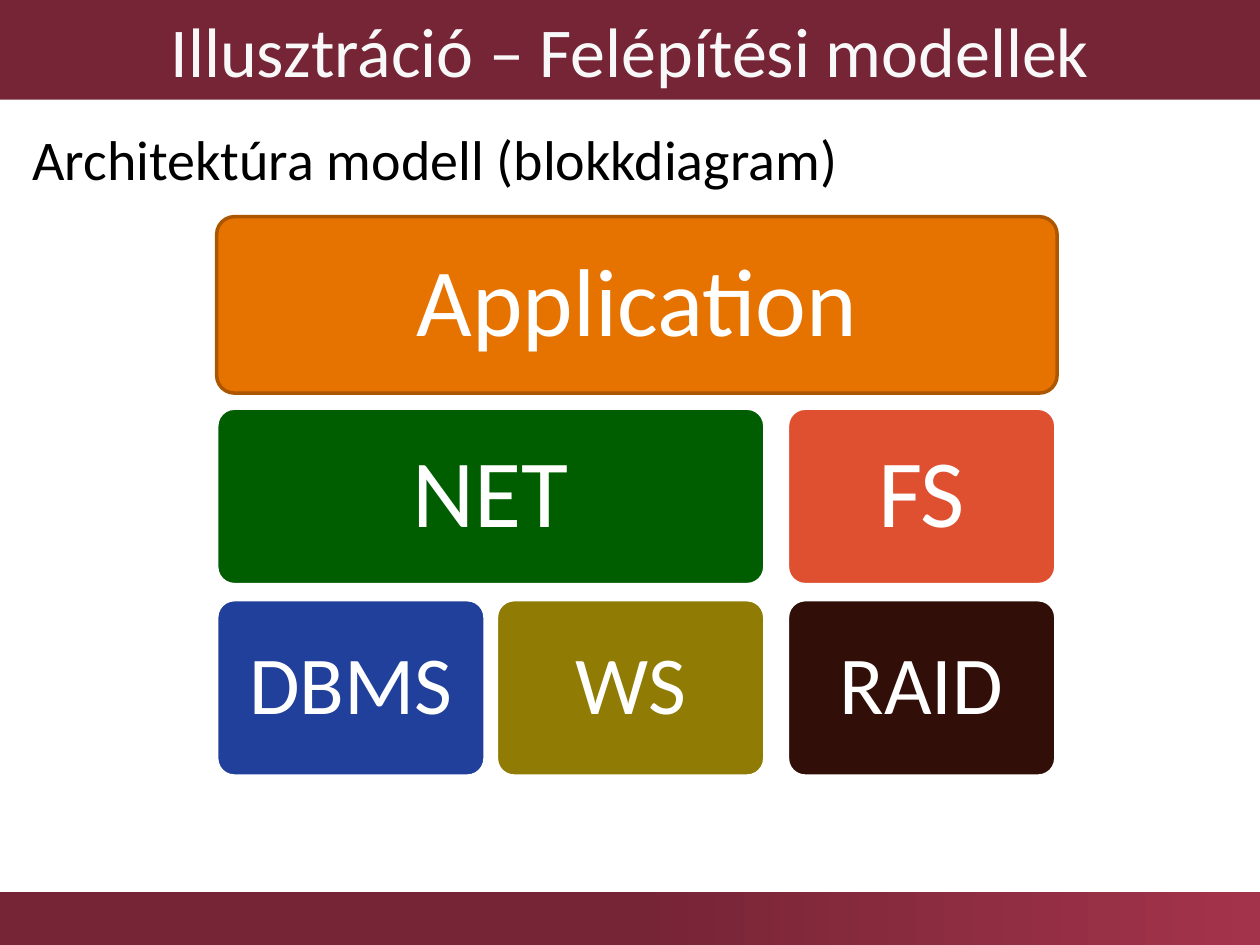
from pptx import Presentation
from pptx.dml.color import RGBColor
from pptx.enum.shapes import MSO_SHAPE
from pptx.enum.text import MSO_ANCHOR, PP_ALIGN
from pptx.util import Pt

HUES = {
    "wine": "762536", "rose": "A3334B", "pale": "F8F8F8",
    "white": "FFFFFF", "black": "000000", "orange": "E67300",
    "rust": "AC5600", "green": "005E00", "blue": "20409B",
    "olive": "907C04", "coral": "DF5030", "brown": "310F08",
}
LEFT, TOP, HIGH, STEP = 123.84, 123.84, 100.8, 109.44
COLS = [LEFT, 283.68, 450]
UNIT, PAIR, FULL = 153.36, 313.2, 480.24
BLOCKS = [
    ("Application", 0, 0, FULL, "orange", "rust", 55),
    ("NET", 0, 1, PAIR, "green", "white", 55),
    ("FS", 2, 1, UNIT, "coral", "white", 55),
    ("DBMS", 0, 2, UNIT, "blue", "white", 47),
    ("WS", 1, 2, UNIT, "olive", "white", 47),
    ("RAID", 2, 2, UNIT, "brown", "white", 47),
]


def hue(name):
    return RGBColor.from_string(HUES[name])


def write(shape, text, size, color="white", align=PP_ALIGN.CENTER,
          anchor=MSO_ANCHOR.MIDDLE, pad=(7.2, 3.6), space=1.0):
    frame = shape.text_frame
    frame.word_wrap = True
    frame.vertical_anchor = anchor
    frame.margin_left = frame.margin_right = Pt(pad[0])
    frame.margin_top = frame.margin_bottom = Pt(pad[1])
    para = frame.paragraphs[0]
    para.alignment = align
    para.line_spacing = space
    run = para.add_run()
    run.text = text
    run.font.name = "Calibri"
    run.font.size = Pt(size)
    run.font.color.rgb = hue(color)


class Deck:
    def __init__(self):
        self.show = Presentation()
        self.show.slide_width = Pt(720)
        self.show.slide_height = Pt(540)
        self.slide = self.show.slides.add_slide(self.show.slide_layouts[6])

    def shape(self, kind, box, fill, line=None):
        item = self.slide.shapes.add_shape(kind, *map(Pt, box))
        item.shadow.inherit = False
        item.fill.solid()
        item.fill.fore_color.rgb = hue(fill)
        if line:
            item.line.color.rgb = hue(line)
            item.line.width = Pt(2)
        else:
            item.line.fill.background()
        return item

    def band(self, box, fill, end=None):
        item = self.shape(MSO_SHAPE.RECTANGLE, box, fill)
        if end:
            item.fill.gradient()
            item.fill.gradient_angle = 0
            stops = zip(item.fill.gradient_stops, (0.5, 1), (fill, end))
            for stop, place, name in stops:
                stop.position = place
                stop.color.rgb = hue(name)
        return item

    def block(self, text, col, row, wide, fill, line, size):
        box = (COLS[col], TOP + row * STEP, wide, HIGH)
        item = self.shape(MSO_SHAPE.ROUNDED_RECTANGLE, box, fill, line)
        item.adjustments[0] = 0.1
        pad = 0.3 * size
        write(item, text, size, pad=(pad, pad), space=0.9)

    def label(self, text, box, size, **style):
        item = self.slide.shapes.add_textbox(*map(Pt, box))
        write(item, text, size, **style)


def main():
    deck = Deck()
    deck.band((0, 509.76, 720, 30.24), "wine", "rose")
    title = deck.band((0, 0, 720, 56.88), "wine")
    write(title, "Illusztráció – Felépítési modellek", 40, color="pale")
    deck.label("Architektúra modell (blokkdiagram)", (11.52, 67.68, 697.68, 48),
               32, color="black", align=PP_ALIGN.LEFT, anchor=MSO_ANCHOR.TOP)
    for block in BLOCKS:
        deck.block(*block)
    deck.show.save("out.pptx")


if __name__ == "__main__":
    main()
